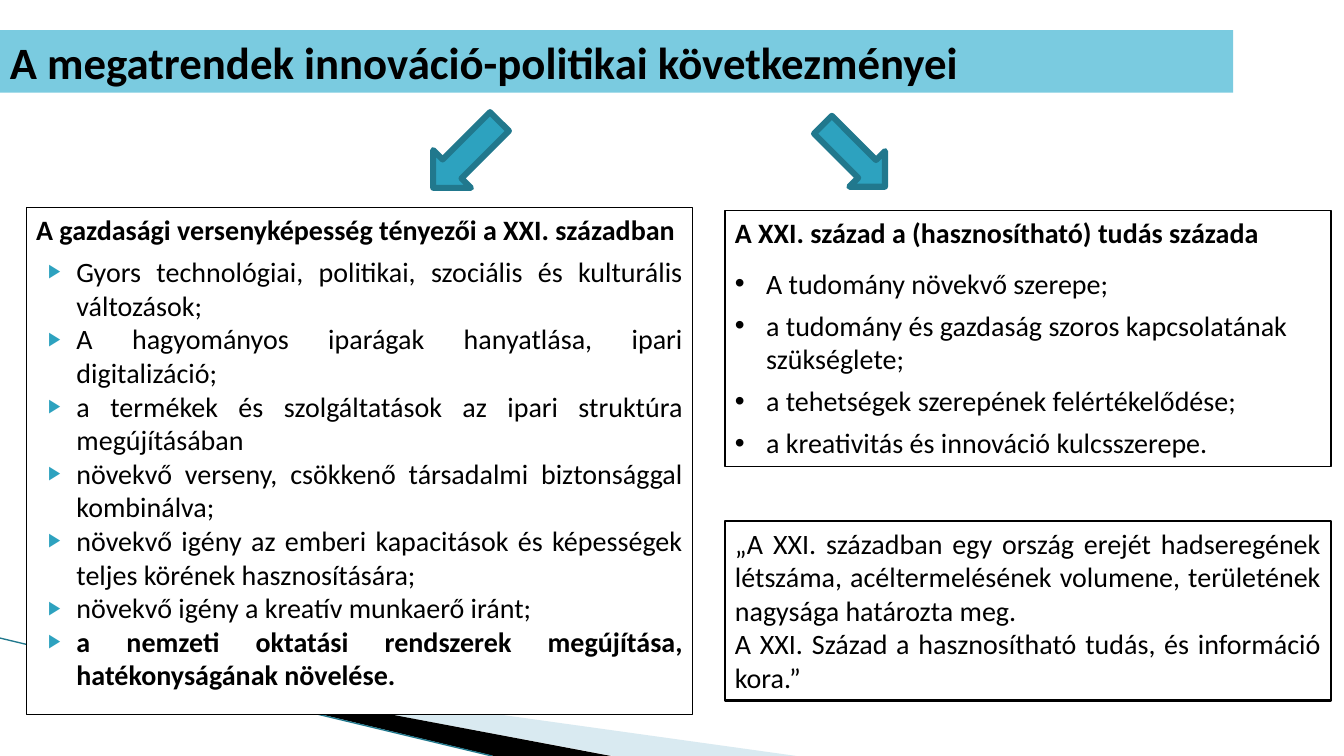
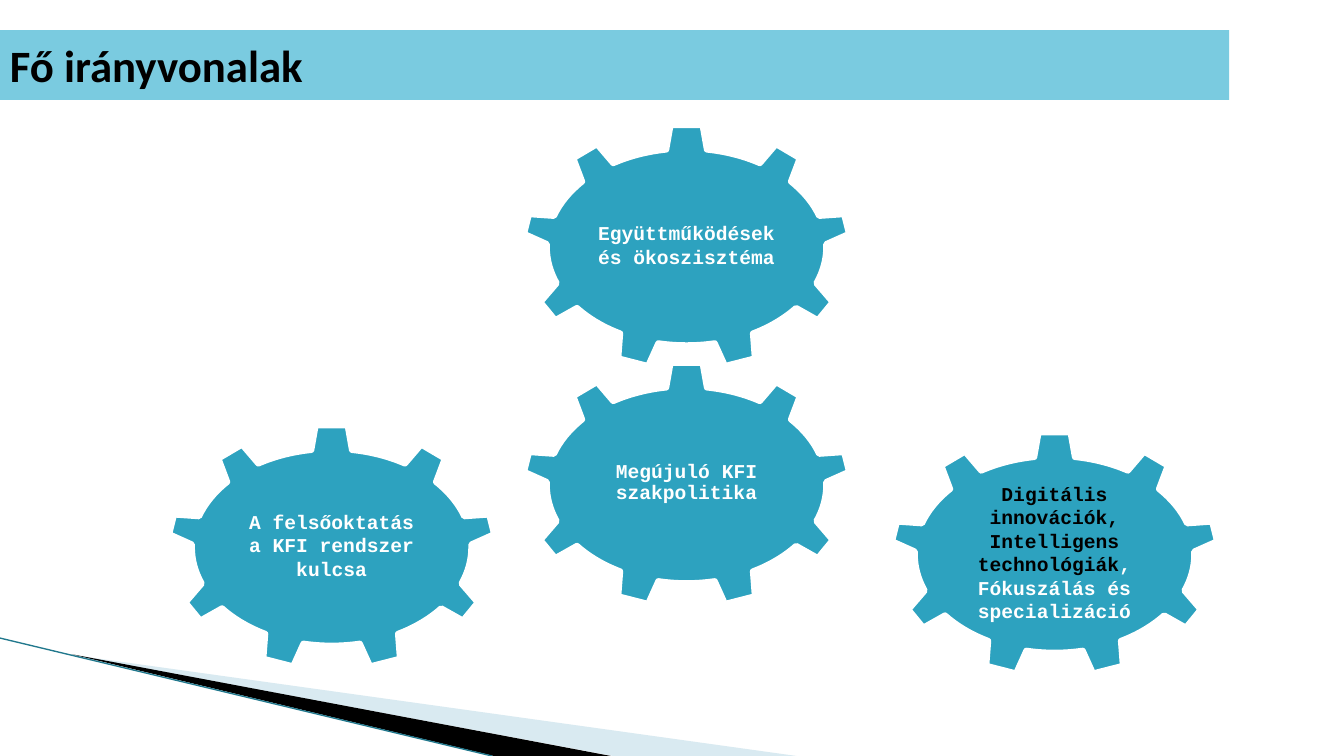
import pptx
import pptx.util
import pptx.dml.color
import pptx.enum.shapes
import pptx.enum.text
import lxml.etree
import pptx.oxml.ns

Inches = pptx.util.Inches
Pt = pptx.util.Pt
MSO_SHAPE = pptx.enum.shapes.MSO_SHAPE
ANCHOR = pptx.enum.text.MSO_ANCHOR
ALIGN = pptx.enum.text.PP_ALIGN
qn = pptx.oxml.ns.qn

BLACK, WHITE = "000000", "FFFFFF"
TEAL, DARK_TEAL, TITLE_BLUE, PALE_BLUE = "2DA2BF", "21788D", "7ACBE0", "A0CBDC"

TITLE_BANDS = [
    ("A megatrendek innováció-politikai következményei", 12.23, 0.62),
    ("Fő irányvonalak", 12.19, 0.69),
]
SWOOSHES = [
    ([(0.73, 6.5), (7.9, 7.5), (6.08, 7.5)], PALE_BLUE, 40),
    ([(0.71, 6.49), (6.06, 7.5), (4.9, 7.5)], BLACK, 100),
]

FACTORS_HEADING = "A gazdasági versenyképesség tényezői a XXI. században"
FACTORS = [
    "Gyors technológiai, politikai, szociális és kulturális változások;",
    "A hagyományos iparágak hanyatlása, ipari digitalizáció;",
    "a termékek és szolgáltatások az ipari struktúra megújításában",
    "növekvő verseny, csökkenő társadalmi biztonsággal kombinálva;",
    "növekvő igény az emberi kapacitások és képességek teljes körének hasznosítására;",
    "növekvő igény a kreatív munkaerő iránt;",
]
KEY_FACTOR = "a nemzeti oktatási rendszerek megújítása, hatékonyságának növelése."
KNOWLEDGE_HEADING = "A XXI. század a (hasznosítható) tudás százada"
KNOWLEDGE = [
    "A tudomány növekvő szerepe;",
    "a tudomány és gazdaság szoros kapcsolatának szükséglete;",
    "a tehetségek szerepének felértékelődése;",
    "a kreativitás és innováció kulcsszerepe.",
]
QUOTE = [
    "„A XXI. században egy ország erejét hadseregének létszáma, "
    "acéltermelésének volumene, területének nagysága határozta meg.",
    "A XXI. Század a hasznosítható tudás, és információ kora.”",
]
ARROWS = [((4.36, 1.07, 0.53, 0.93), 45), ((8.22, 1.11, 0.5, 0.87), 315)]

GEAR_SIZE = (3.26, 2.44)
# Left, top, line spacing, paragraphs made of (text, colour) runs
GEARS = [
    (5.18, 1.23, 1, [[("Együttműködések és ökoszisztéma", WHITE)]]),
    (8.83, 4.28, 1, [
        [("Digitális innovációk, Intelligens technológiák", BLACK), (",", WHITE)],
        [("Fókuszálás és specializáció", WHITE)],
    ]),
    (1.66, 4.21, 1, [[("A felsőoktatás", WHITE)], [("a KFI rendszer kulcsa", WHITE)]]),
    (5.18, 3.59, 0.9, [[("Megújuló KFI szakpolitika", WHITE)]]),
]


def rgb(value):
    return pptx.dml.color.RGBColor.from_string(value)


def paint(shape, fill=None, line=None, width=1):
    shape.shadow.inherit = False
    if fill:
        shape.fill.solid()
        shape.fill.fore_color.rgb = rgb(fill)
    else:
        shape.fill.background()
    if line:
        shape.line.color.rgb = rgb(line)
        shape.line.width = Pt(width)
    else:
        shape.line.fill.background()


def add_box(slide, place, kind=MSO_SHAPE.RECTANGLE, anchor=ANCHOR.TOP, **look):
    shape = slide.shapes.add_shape(kind, *map(Inches, place))
    paint(shape, **look)
    shape.text_frame.word_wrap = True
    shape.text_frame.vertical_anchor = anchor
    return shape


def add_bullet(paragraph, char, indent, hanging, color=None, percent=100):
    properties = paragraph._p.get_or_add_pPr()
    properties.set("marL", str(Inches(indent)))
    properties.set("indent", str(-Inches(hanging)))
    if color:
        holder = lxml.etree.SubElement(properties, qn("a:buClr"))
        lxml.etree.SubElement(holder, qn("a:srgbClr"), val=color)
    lxml.etree.SubElement(properties, qn("a:buSzPct"), val=str(percent * 1000))
    lxml.etree.SubElement(properties, qn("a:buFont"), typeface="Arial")
    lxml.etree.SubElement(properties, qn("a:buChar"), char=char)


def write(shape, text, size=20, font="Calibri", color=BLACK, bold=False,
          align=ALIGN.LEFT, after=0, spacing=1, bullet=None):
    """Add a paragraph; text is a string or a list of (text, colour) runs."""
    frame = shape.text_frame
    paragraph = frame.paragraphs[0]
    if paragraph.runs:
        paragraph = frame.add_paragraph()
    if bullet:
        add_bullet(paragraph, **bullet)
    paragraph.alignment = align
    paragraph.space_after = Pt(after)
    paragraph.line_spacing = spacing
    for words, run_color in [(text, color)] if isinstance(text, str) else text:
        run = paragraph.add_run()
        run.text = words
        run.font.size = Pt(size)
        run.font.name = font
        run.font.bold = bold
        run.font.color.rgb = rgb(run_color)


def add_swooshes(slide):
    for points, color, opacity in SWOOSHES:
        corners = [(Inches(x), Inches(y)) for x, y in points]
        builder = slide.shapes.build_freeform(*corners[0])
        builder.add_line_segments(corners[1:], close=True)
        swoosh = builder.convert_to_shape()
        paint(swoosh, fill=color)
        if opacity < 100:
            fill_color = swoosh._element.spPr.find(".//" + qn("a:srgbClr"))
            lxml.etree.SubElement(fill_color, qn("a:alpha"), val=str(opacity * 1000))
    edge = slide.shapes.add_connector(
        pptx.enum.shapes.MSO_CONNECTOR.STRAIGHT,
        Inches(0), Inches(6.33), Inches(4.88), Inches(7.5))
    edge.line.color.rgb = rgb(DARK_TEAL)
    edge.line.width = Pt(0.95)
    lxml.etree.SubElement(edge._element.spPr, qn("a:effectLst"))


def add_slide(presentation, title, width, height):
    slide = presentation.slides.add_slide(presentation.slide_layouts[6])
    add_swooshes(slide)
    band = add_box(slide, (0, 0.3, width, height), anchor=ANCHOR.MIDDLE, fill=TITLE_BLUE)
    write(band, title, size=32, bold=True)
    return slide


def fill_consequences(slide):
    triangle = dict(char="▶", indent=0.4, hanging=0.28, color=TEAL, percent=68)
    factors = add_box(slide, (0.26, 2.06, 6.61, 5.03), fill=WHITE, line=BLACK)
    write(factors, FACTORS_HEADING, bold=True, after=6)
    for text in FACTORS + [KEY_FACTOR]:
        write(factors, text, bold=text == KEY_FACTOR, align=ALIGN.JUSTIFY, bullet=triangle)

    dot = dict(char="•", indent=0.31, hanging=0.31)
    knowledge = add_box(slide, (7.19, 2.09, 6.01, 2.54), line=BLACK)
    write(knowledge, KNOWLEDGE_HEADING, bold=True, after=12)
    for text in KNOWLEDGE:
        write(knowledge, text, after=6, bullet=dot)

    for place, rotation in ARROWS:
        arrow = add_box(slide, place, kind=MSO_SHAPE.DOWN_ARROW,
                        fill=TEAL, line=DARK_TEAL, width=4.33)
        arrow.rotation = rotation

    quote = add_box(slide, (7.19, 5.17, 6.01, 1.78), line=BLACK, width=1.5)
    for text in QUOTE:
        write(quote, text, align=ALIGN.JUSTIFY)


def fill_directions(slide):
    for left, top, spacing, paragraphs in GEARS:
        gear = add_box(slide, (left, top, *GEAR_SIZE), kind=MSO_SHAPE.GEAR_9,
                       anchor=ANCHOR.MIDDLE, fill=TEAL, line=WHITE, width=4.33)
        frame = gear.text_frame
        frame.margin_left = frame.margin_right = 0
        frame.margin_top = frame.margin_bottom = 0
        for runs in paragraphs:
            write(gear, runs, size=14, font="Courier New", bold=True,
                  align=ALIGN.CENTER, spacing=spacing)


def main():
    presentation = pptx.Presentation()
    presentation.slide_width = Inches(13.33)
    presentation.slide_height = Inches(7.5)
    for band, fill_content in zip(TITLE_BANDS, (fill_consequences, fill_directions)):
        fill_content(add_slide(presentation, *band))
    presentation.save("out.pptx")


if __name__ == "__main__":
    main()
